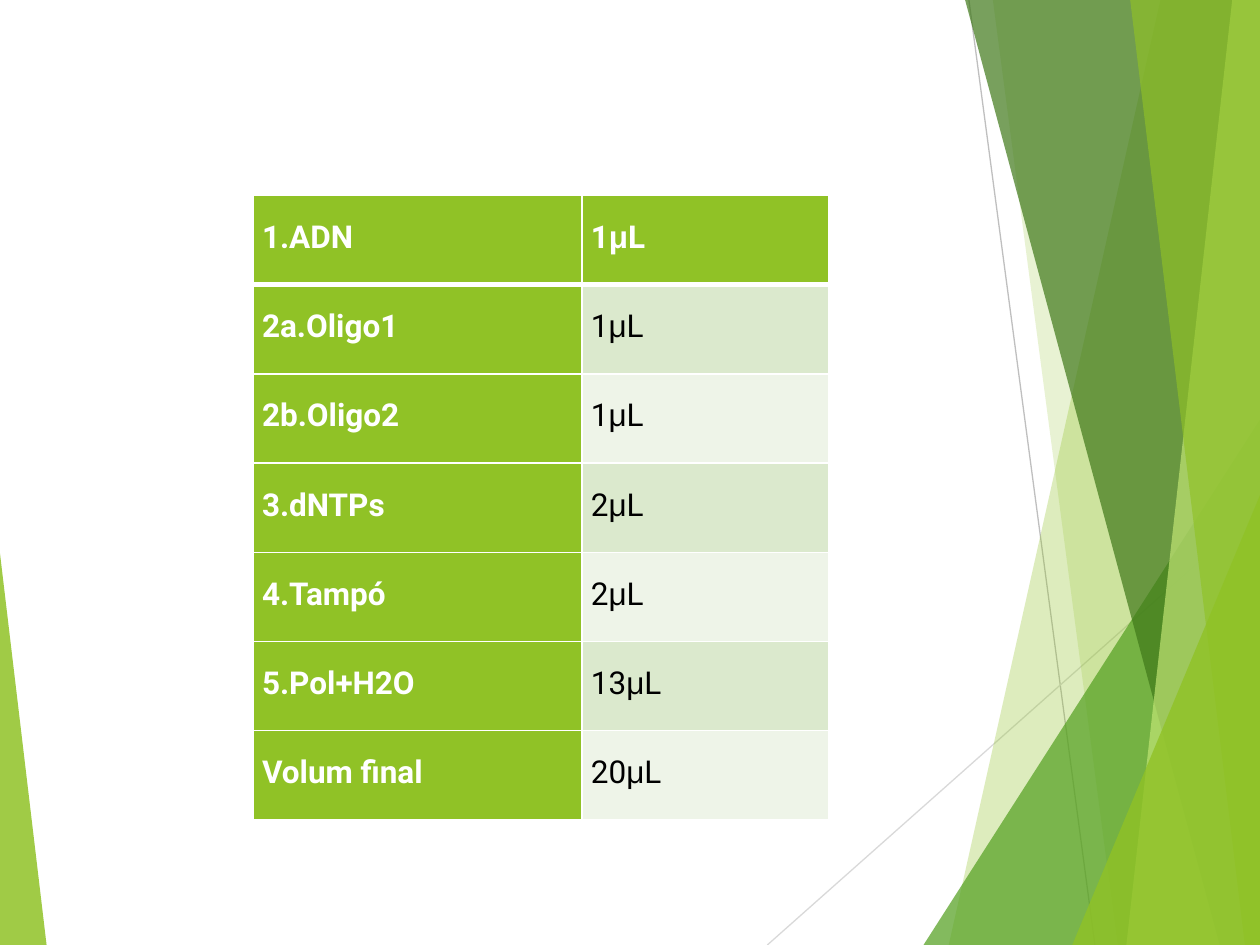
from dataclasses import dataclass

from lxml.etree import SubElement
from pptx import Presentation
from pptx.dml.color import RGBColor
from pptx.enum.dml import MSO_FILL
from pptx.enum.shapes import MSO_CONNECTOR, MSO_SHAPE
from pptx.oxml import parse_xml
from pptx.oxml.ns import nsdecls, qn
from pptx.util import Inches, Pt

# The slide is a grid of 1000 columns by 750 rows
COLUMNS, ROWS = 1000, 750
UNIT = Inches(10) // COLUMNS


@dataclass(frozen=True)
class Theme:
    lime: str = "90C226"
    green: str = "54A021"
    forest: str = "3F7819"
    pale: str = "C0E474"
    band_dark: str = "DBE9CD"
    band_light: str = "EEF4E8"
    white: str = "FFFFFF"
    black: str = "000000"
    ray_dark: str = "BFBFBF"
    ray_light: str = "D9D9D9"
    font: str = "Roboto"
    greek_font: str = "Arial"
    size: float = 18
    line_spacing: float = 16.8
    space_after: float = 1.2


THEME = Theme()

REAGENTS = [
    ("1.ADN", "1"),
    ("2a.Oligo1", "1"),
    ("2b.Oligo2", "1"),
    ("3.dNTPs", "2"),
    ("4.Tampó", "2"),
    ("5.Pol+H2O", "13"),
    ("Volum final", "20"),
]


def apply(target, formats):
    for name, value in formats.items():
        setattr(target, name, value)


def paint(facet, color, opacity):
    """Fill a facet with a see-through colour and no outline."""
    facet.shadow.inherit = False
    facet.line.fill.background()
    facet.fill.solid()
    facet.fill.fore_color.rgb = RGBColor.from_string(color)
    tint = facet.fill._xPr.find(qn("a:solidFill")).find(qn("a:srgbClr"))
    SubElement(tint, qn("a:alpha"), val=str(opacity * 1000))


def add_ray(slide, start, end, color):
    ray = slide.shapes.add_connector(
        MSO_CONNECTOR.STRAIGHT, *(v * UNIT for v in (*start, *end)))
    ray.line.color.rgb = RGBColor.from_string(color)
    ray.line.width = Pt(0.75)
    SubElement(ray._element.spPr, qn("a:effectLst"))


def add_band(slide, box, top_x, bottom_x, color, opacity):
    """A full-height band with a slanted left side, flush with the box's right."""
    left, top, width, height = box
    right, bottom = left + width, top + height
    builder = slide.shapes.build_freeform(top_x, top, scale=UNIT)
    builder.add_line_segments([(right, top), (right, bottom), (bottom_x, bottom)])
    paint(builder.convert_to_shape(), color, opacity)


def add_corner(slide, box, apex, color, opacity):
    corner = slide.shapes.add_shape(
        MSO_SHAPE.ISOSCELES_TRIANGLE, *(v * UNIT for v in box))
    corner.adjustments[0] = apex
    paint(corner, color, opacity)


def add_facets(slide, box):
    """Rays, bands and corners that decorate the two sides of the slide."""
    left, top, width, height = box
    right, bottom = left + width, top + height

    def right_corner(x, y, color, opacity):
        add_corner(slide, (x, y, right - x, bottom - y), 1, color, opacity)

    # Thin rays
    add_ray(slide, (769, top), (869, bottom), THEME.ray_dark)
    add_ray(slide, (right, 403), (609, bottom), THEME.ray_light)

    # Right side, back to front
    add_band(slide, box, 921, 753, THEME.lime, 30)
    add_band(slide, box, 788, 887, THEME.lime, 20)
    right_corner(733, 333, THEME.green, 72)
    add_band(slide, box, 766, 968, THEME.forest, 70)
    add_band(slide, box, 978, 894, THEME.pale, 70)
    add_band(slide, box, 897, 988, THEME.lime, 65)
    right_corner(851, 393, THEME.lime, 80)

    # Left corner
    add_corner(slide, (left, 439, 37, bottom - 439), 0, THEME.lime, 85)


def set_borders(cell, widths):
    """Draw white borders; widths are in points, keyed by side."""
    properties = cell._tc.get_or_add_tcPr()
    for index, side in enumerate("LRTB"):
        properties.insert(index, parse_xml(
            f'<a:ln{side} {nsdecls("a")} w="{Pt(widths.get(side, 1))}">'
            f'<a:solidFill><a:srgbClr val="{THEME.white}"/></a:solidFill>'
            f'</a:ln{side}>'))


def fill_cell(cell, runs, background, color, bold, borders):
    apply(cell, dict(margin_left=Inches(0.07), margin_right=Inches(0.07),
                     margin_top=Inches(0.25), margin_bottom=0))
    cell.fill.solid()
    cell.fill.fore_color.rgb = RGBColor.from_string(background)
    set_borders(cell, borders)
    paragraph = cell.text_frame.paragraphs[0]
    apply(paragraph, dict(line_spacing=Pt(THEME.line_spacing),
                          space_after=Pt(THEME.space_after)))
    for text, font in runs:
        run = paragraph.add_run()
        run.text = text
        apply(run.font, dict(name=font, size=Pt(THEME.size), bold=bold))
        run.font.color.rgb = RGBColor.from_string(color)


def add_reagent_table(slide, box):
    """Reagents of the mix with their volumes in microlitres."""
    left, top, width, height = (v * UNIT for v in box)
    table = slide.shapes.add_table(
        len(REAGENTS), 2, left, top, width, height).table
    table.columns[0].width = 261 * UNIT
    table.columns[1].width = width - 261 * UNIT

    for row, (reagent, volume) in enumerate(REAGENTS):
        header = row == 0
        borders = {0: {"B": 3}, 1: {"T": 3}}.get(row, {})
        band = THEME.band_dark if row % 2 else THEME.band_light
        fill_cell(table.cell(row, 0), [(reagent, THEME.font)],
                  THEME.lime, THEME.white, True, borders)
        fill_cell(table.cell(row, 1),
                  [(volume, THEME.font), ("μ", THEME.greek_font), ("L", THEME.font)],
                  THEME.lime if header else band,
                  THEME.white if header else THEME.black, header, borders)


def main():
    deck = Presentation()
    apply(deck, dict(slide_width=COLUMNS * UNIT, slide_height=ROWS * UNIT))
    slide = deck.slides.add_slide(deck.slide_layouts[6])
    add_facets(slide, (0, 0, COLUMNS, ROWS))
    add_reagent_table(slide, (201, 155, 457, 496))
    deck.save("out.pptx")


if __name__ == "__main__":
    main()
